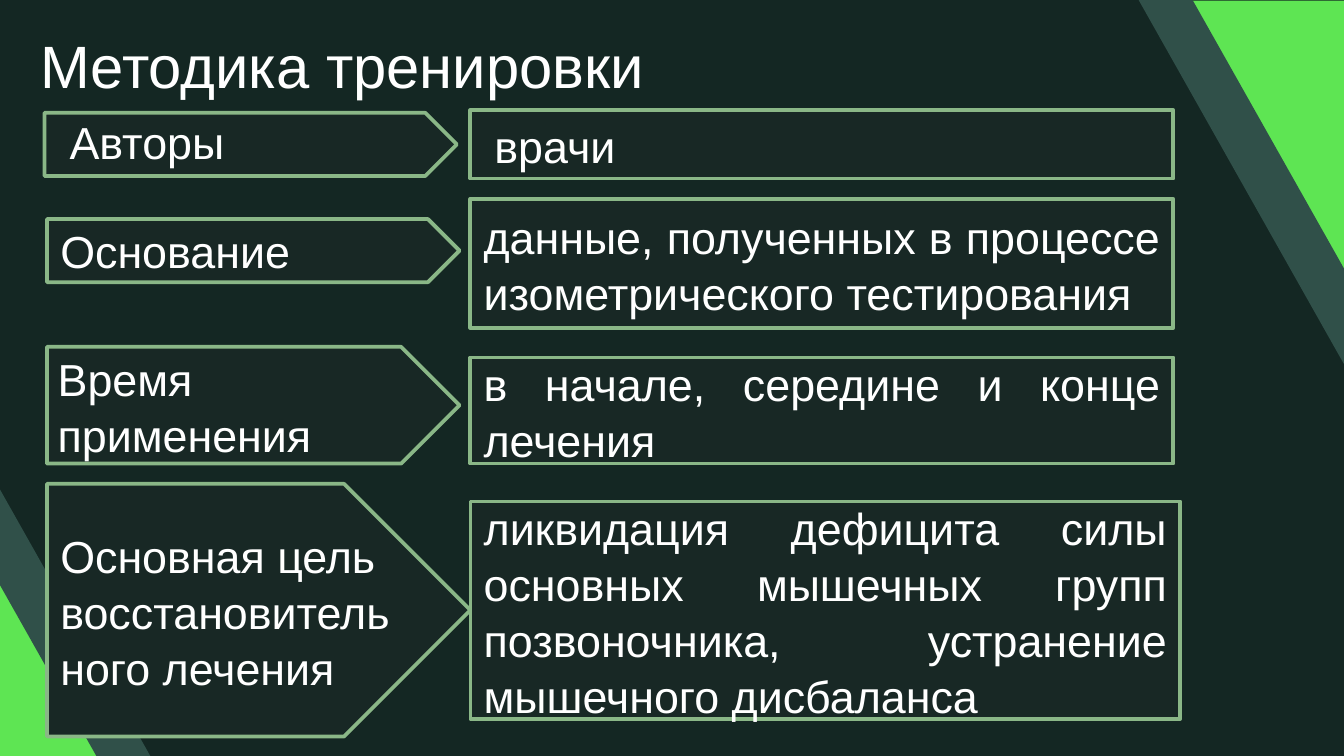
from pptx import Presentation
from pptx.dml.color import RGBColor
from pptx.enum.shapes import MSO_SHAPE as SHAPE
from pptx.enum.text import MSO_ANCHOR as ANCHOR, PP_ALIGN as ALIGN
from pptx.util import Pt


def color(hex_value):
    return RGBColor.from_string(hex_value)


def write(target, text, size=24, align=ALIGN.LEFT, anchor=ANCHOR.TOP, wrap=True, spacing=1.04):
    frame = target.text_frame
    frame.word_wrap = wrap
    frame.vertical_anchor = anchor
    paragraph = frame.paragraphs[0]
    paragraph.alignment = align
    paragraph.line_spacing = spacing
    run = paragraph.add_run()
    run.text = text
    run.font.size = Pt(size)
    run.font.name = "Arial"
    run.font.color.rgb = color("FFFFFF")


prs = Presentation()
prs.slide_width, prs.slide_height = Pt(720), Pt(405)
slide = prs.slides.add_slide(prs.slide_layouts[5])
slide.background.fill.solid()
slide.background.fill.fore_color.rgb = color("142723")
shapes = slide.shapes

# Green corner triangles: left, top, width, height, rotation
for left, top, width, height, rotation in [
    (625.3, 0.4, 95, 151.9, 180),
    (0, 290.9, 70.6, 115.2, 0),
]:
    corner = shapes.add_shape(SHAPE.RIGHT_TRIANGLE, Pt(left), Pt(top), Pt(width), Pt(height))
    corner.rotation = rotation
    corner.shadow.inherit = False
    corner.fill.solid()
    corner.fill.fore_color.rgb = color("5EE553")
    corner.line.fill.background()

# Slanted bands along the corners
for left, top in [(455.8, 44.6), (-174.2, 322.6)]:
    outline = shapes.build_freeform(Pt(left), Pt(top))
    outline.add_line_segments(
        [(Pt(left + x), Pt(top + y)) for x, y in [(416, 25.2), (416, 50.4), (0, 25.2)]]
    )
    band = outline.convert_to_shape()
    band.rotation = 57.1
    band.shadow.inherit = False
    band.fill.solid()
    band.fill.fore_color.rgb = color("305049")
    band.line.fill.background()

# Title
title = shapes.title
title.left, title.top, title.width, title.height = Pt(14.4), Pt(10.1), Pt(341.3), Pt(46.1)
write(title, "Методика тренировки", size=32, wrap=False)

# Rows: label, arrow box, label box (None: inside the arrow),
# answer, answer box, answer label box (None: inside the rectangle)
rows = [
    ("Авторы", (23.8, 60.5, 221, 33.8), (30.2, 56.9, 148.3, 36),
     "врачи", (252, 59, 376.6, 36.7), (257.8, 59, 175.7, 36)),
    ("Основание", (25.2, 117.4, 221, 33.8), (25.2, 115.2, 147.6, 36),
     "данные, полученных в процессе изометрического тестирования",
     (252, 106.6, 376.6, 69.1), None),
    ("Время применения", (25.2, 185.8, 221, 62.6), (23.8, 183.6, 222.5, 65.5),
     "в начале, середине и конце лечения", (252, 191.5, 376.6, 56.9), None),
    ("Основная цель восстановительного лечения", (25.2, 259.2, 226.8, 135.4), None,
     "ликвидация дефицита силы основных мышечных групп позвоночника, "
     "устранение мышечного дисбаланса", (252, 268.6, 380.2, 116.6), None),
]
for label, arrow_box, label_box, answer, answer_box, answer_label_box in rows:
    for preset, text, box, text_box, align in [
        (SHAPE.PENTAGON, label, arrow_box, label_box, ALIGN.LEFT),
        (SHAPE.RECTANGLE, answer, answer_box, answer_label_box, ALIGN.JUSTIFY),
    ]:
        panel = shapes.add_shape(preset, *map(Pt, box))
        panel.shadow.inherit = False
        panel.fill.solid()
        panel.fill.fore_color.rgb = color("182825")
        panel.line.color.rgb = color("8AB787")
        panel.line.width = Pt(2)
        if text_box:
            write(shapes.add_textbox(*map(Pt, text_box)), text)
        else:
            write(panel, text, align=align, anchor=ANCHOR.MIDDLE)

prs.save("out.pptx")
